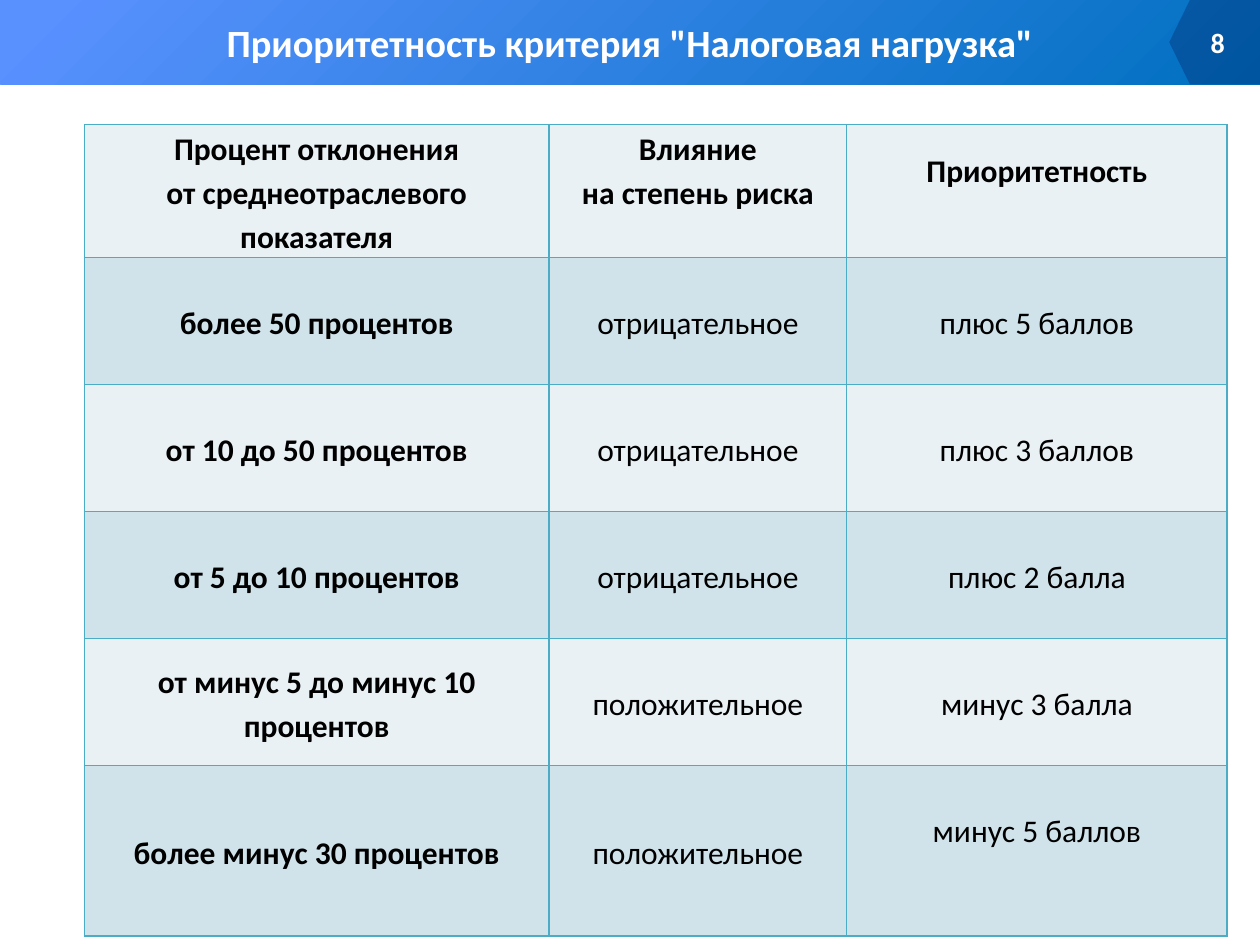
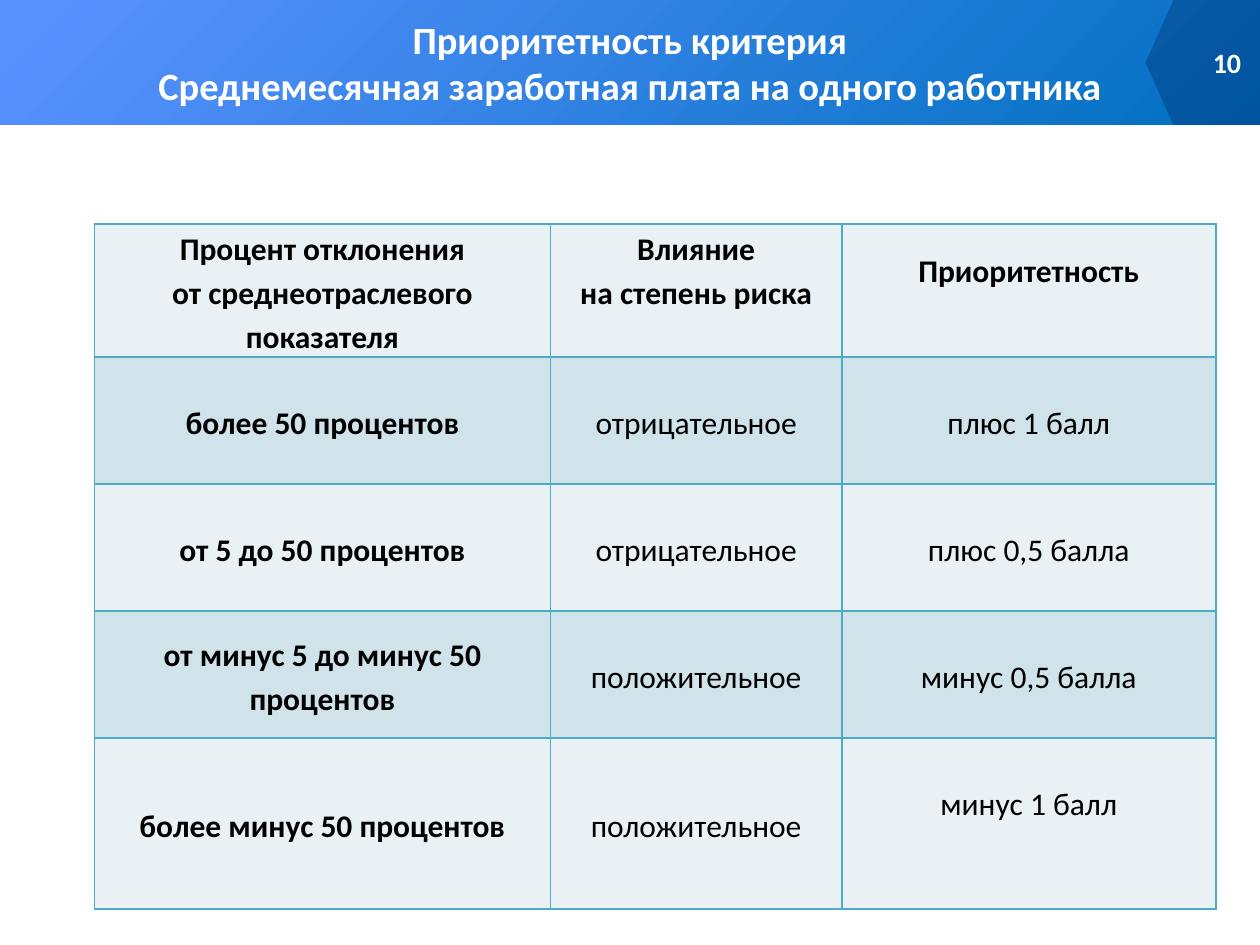
from dataclasses import dataclass
from typing import Any

from lxml.etree import SubElement
from pptx import Presentation
from pptx.dml.color import RGBColor
from pptx.enum.shapes import MSO_SHAPE
from pptx.enum.text import MSO_ANCHOR, PP_ALIGN
from pptx.oxml import parse_xml
from pptx.oxml.ns import nsdecls, qn
from pptx.util import Cm, Pt

WHITE, BLACK = "FFFFFF", "000000"
BAND_STOPS = ((0.04, "5991FF"), (1.0, "0070C0"))
TAB_FILL, TAB_ALPHA = "002060", 33
ROW_FILLS = ("E9F1F5", "D0E3EA")
BORDER = "4BACC6"

FONT = {"name": "Calibri"}
TITLE = FONT | {"size": Pt(22), "bold": True}
NUMBER = FONT | {"size": Pt(16), "bold": True}
STRONG = FONT | {"size": Pt(18), "bold": True}
PLAIN = STRONG | {"bold": False}

CENTERED = {"alignment": PP_ALIGN.CENTER}
CELL_PARAGRAPH = CENTERED | {"line_spacing": 1.15}
RIGHT = {"alignment": PP_ALIGN.RIGHT}
CELL = {
    "vertical_anchor": MSO_ANCHOR.MIDDLE,
    "margin_left": Cm(0.15), "margin_right": Cm(0.15),
    "margin_top": 0, "margin_bottom": 0,
}

SLIDE_W, SLIDE_H = Cm(25.4), Cm(19.05)
HEADER_H, ROW_H, LAST_ROW_H = Cm(2.68), Cm(2.56), Cm(3.44)
LINE_H = Cm(0.88)
NUMBER_W, NUMBER_H = Cm(1.37), Cm(0.76)

HEADER = (
    "Процент отклонения\nот среднеотраслевого показателя",
    "Влияние\nна степень риска",
    "Приоритетность",
)
NEGATIVE, POSITIVE = "отрицательное", "положительное"


@dataclass(frozen=True)
class Band:
    title: str
    number: str
    height: float
    tab_width: float
    number_left: float


@dataclass(frozen=True)
class PriorityTable:
    left: float
    top: float
    columns: tuple[float, ...]
    rows: tuple[tuple[str, str, str], ...]


PAGES = (
    (
        Band('Приоритетность критерия "Налоговая нагрузка"', "8", 1.7, 1.83, 23.57),
        PriorityTable(1.7, 2.51, (9.37, 6.0, 7.67), (
            ("более 50 процентов", NEGATIVE, "плюс 5 баллов"),
            ("от 10 до 50 процентов", NEGATIVE, "плюс 3 баллов"),
            ("от 5 до 10 процентов", NEGATIVE, "плюс 2 балла"),
            ("от минус 5 до минус 10 процентов", POSITIVE, "минус 3 балла"),
            ("более минус 30 процентов", POSITIVE, "минус 5 баллов"),
        )),
    ),
    (
        Band("Приоритетность критерия\nСреднемесячная заработная плата на одного работника",
             "10", 2.52, 2.31, 23.9),
        PriorityTable(1.9, 4.52, (9.2, 5.87, 7.54), (
            ("более 50 процентов", NEGATIVE, "плюс 1 балл"),
            ("от 5 до 50 процентов", NEGATIVE, "плюс 0,5 балла"),
            ("от минус 5 до минус 50 процентов", POSITIVE, "минус 0,5 балла"),
            ("более минус 50 процентов", POSITIVE, "минус 1 балл"),
        )),
    ),
)


def rgb(color: str) -> RGBColor:
    return RGBColor.from_string(color)


def apply(target: Any, values: dict[str, Any]) -> None:
    for name, value in values.items():
        setattr(target, name, value)


def write(tf: Any, text: str, font: dict, color: str, paragraph: dict) -> None:
    """Fill a text frame with one paragraph for each line of text."""
    for i, line in enumerate(text.split("\n")):
        p = tf.add_paragraph() if i else tf.paragraphs[0]
        apply(p, paragraph)
        r = p.add_run()
        r.text = line
        apply(r.font, font)
        r.font.color.rgb = rgb(color)


def add_plain_shape(s: Any, kind: MSO_SHAPE, left: int, width: int, height: int) -> Any:
    """Add a shape at the top edge, without outline or shadow."""
    sp = s.shapes.add_shape(kind, left, 0, width, height)
    sp.shadow.inherit = False
    sp.line.fill.background()
    return sp


def add_band(s: Any, band: Band) -> None:
    height, tab_w = Cm(band.height), Cm(band.tab_width)
    sp = add_plain_shape(s, MSO_SHAPE.RECTANGLE, 0, SLIDE_W, height)
    sp.fill.gradient()
    sp.fill.gradient_angle = 315
    for stop, (position, color) in zip(sp.fill.gradient_stops, BAND_STOPS):
        stop.position = position
        stop.color.rgb = rgb(color)
    sp.text_frame.vertical_anchor = MSO_ANCHOR.MIDDLE
    write(sp.text_frame, band.title, TITLE, WHITE, CENTERED)

    tab = add_plain_shape(s, MSO_SHAPE.PENTAGON, SLIDE_W - tab_w, tab_w, height)
    tab.rotation = 180
    tab.adjustments[0] = 0.245
    tab.fill.solid()
    tab.fill.fore_color.rgb = rgb(TAB_FILL)
    clr = tab.fill._xPr.find(f"{qn('a:solidFill')}/{qn('a:srgbClr')}")
    SubElement(clr, qn("a:alpha"), val=str(TAB_ALPHA * 1000))

    box = s.shapes.add_textbox(Cm(band.number_left), (height - NUMBER_H) // 2,
                               NUMBER_W, NUMBER_H)
    apply(box.text_frame, {"word_wrap": True, "vertical_anchor": MSO_ANCHOR.MIDDLE})
    write(box.text_frame, band.number, NUMBER, WHITE, RIGHT)


def add_borders(cell: Any) -> None:
    tc_pr = cell._tc.get_or_add_tcPr()
    for i, side in enumerate("LRTB"):
        tc_pr.insert(i, parse_xml(
            f'<a:ln{side} {nsdecls("a")} w="{Pt(1)}"><a:solidFill>'
            f'<a:srgbClr val="{BORDER}"/></a:solidFill></a:ln{side}>'))


def add_priority_table(s: Any, spec: PriorityTable) -> None:
    rows = (HEADER, *spec.rows)
    last = len(rows) - 1
    heights = [HEADER_H] + [ROW_H] * (last - 1) + [LAST_ROW_H]
    widths = [Cm(w) for w in spec.columns]
    table = s.shapes.add_table(len(rows), len(widths), Cm(spec.left), Cm(spec.top),
                               sum(widths), sum(heights)).table
    apply(table, {"first_row": False, "horz_banding": False})
    for column, width in zip(table.columns, widths):
        column.width = width
    for i, (texts, height) in enumerate(zip(rows, heights)):
        table.rows[i].height = height
        for j, text in enumerate(texts):
            cell = table.cell(i, j)
            apply(cell, CELL)
            # These cells keep one line free below their text.
            if (i == 0 and j > 0) or (i == last and j == 2):
                cell.margin_bottom = LINE_H
            cell.fill.solid()
            cell.fill.fore_color.rgb = rgb(ROW_FILLS[i % 2])
            add_borders(cell)
            font = STRONG if i == 0 or j == 0 else PLAIN
            write(cell.text_frame, text, font, BLACK, CELL_PARAGRAPH)


def main() -> None:
    prs = Presentation()
    apply(prs, {"slide_width": SLIDE_W, "slide_height": SLIDE_H})
    for band, table in PAGES:
        s = prs.slides.add_slide(prs.slide_layouts[6])
        add_band(s, band)
        add_priority_table(s, table)
    prs.save("out.pptx")


if __name__ == "__main__":
    main()
